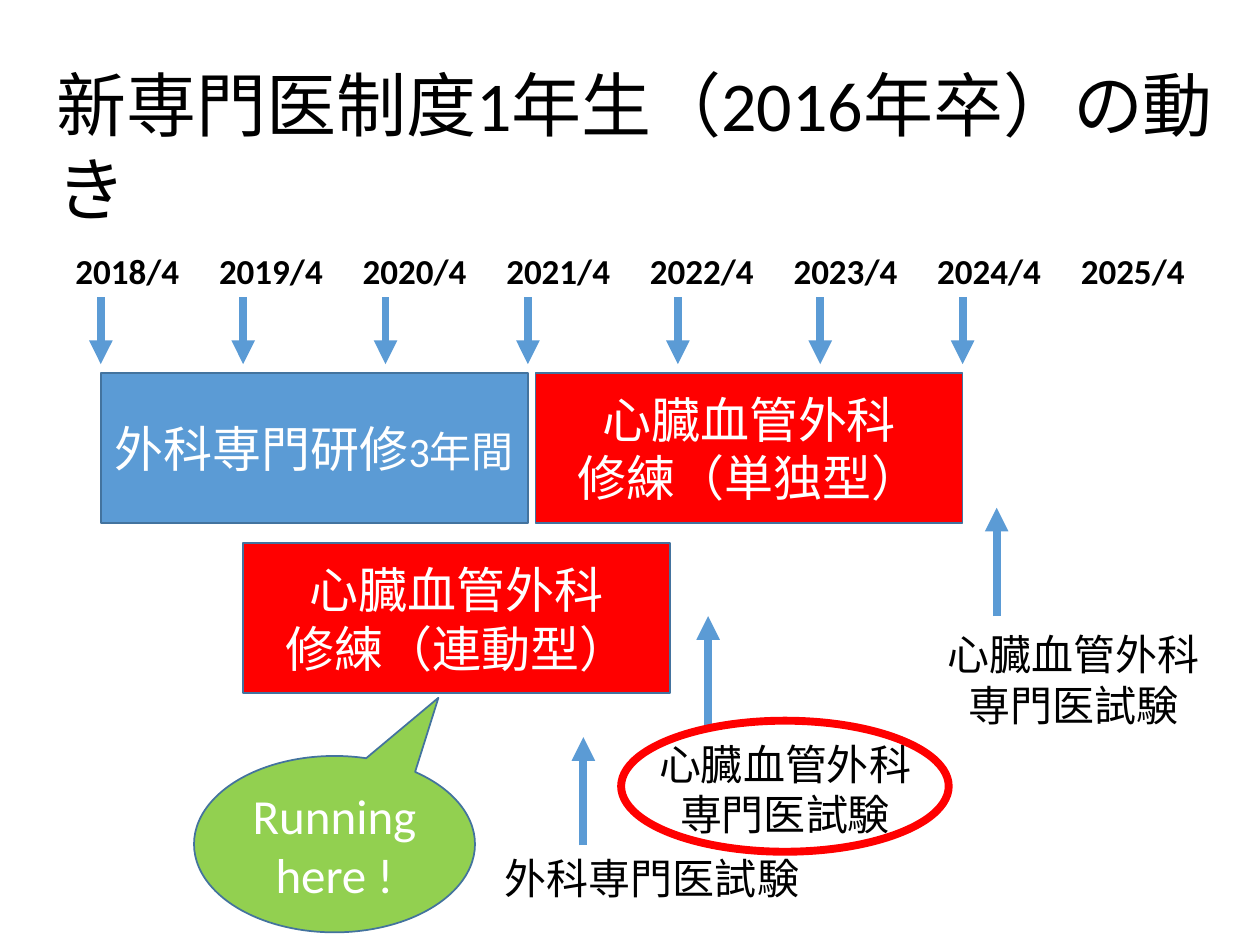
import pptx
import pptx.util
import pptx.dml.color
import pptx.enum.shapes
import pptx.enum.text
import pptx.oxml.ns
from lxml import etree

Inches, Pt = pptx.util.Inches, pptx.util.Pt
SHAPE = pptx.enum.shapes.MSO_SHAPE
ALIGN = pptx.enum.text.PP_ALIGN
ANCHOR = pptx.enum.text.MSO_ANCHOR
AUTO_SIZE = pptx.enum.text.MSO_AUTO_SIZE

# Content
HEADING = "新専門医制度1年生（2016年卒）の動き"
DATES = [f"{year}/4" for year in range(2018, 2026)]
# start year, whole gap passed, row, fill, paragraphs of (text, size) runs
TRAININGS = [
    (0, False, 0, "blue", [[("外科専門研修", 28), ("3年間", 24)]]),
    (3, True, 0, "red", [[("心臓血管外科", 28)], [("修練（単独型）", 28)]]),
    (1, False, 1, "red", [[("心臓血管外科", 28)], [("修練（連動型）", 28)]]),
]
HEART_EXAM = ["心臓血管外科", "専門医試験"]
# label lines, label box, arrow x, arrow bottom
EXAMS = [
    (["外科専門医試験"], (3.91, 6.72, 2.56, 0.5), 4.63, 6.71),
    (HEART_EXAM, (5.12, 5.81, 2.22, 0.91), 5.62, 5.75),
    (HEART_EXAM, (7.41, 4.94, 2.22, 0.91), 7.91, 4.89),
]
CALLOUT = "Running here !"

COLORS = {"blue": "5B9BD5", "edge": "43739E", "red": "FF0000",
          "green": "92D050", "black": "000000", "white": "FFFFFF"}

# Timeline grid
START, YEAR, GAP = 0.8, 1.13, 0.06
DATE_PITCH = 1.14
BAR_TOP, BAR_HEIGHT, ROW_PITCH = 2.96, 1.19, 1.35
DATE_ARROW = (2.36, 2.89)
EXAM_ARROW_LENGTH = 0.86


def year_x(year, after_gap):
    return START + YEAR * year + (GAP if after_gap else 0)


def color(name):
    return pptx.dml.color.RGBColor.from_string(COLORS[name])


def box(left, top, width, height):
    return [Inches(value) for value in (left, top, width, height)]


def place(part, bounds):
    part.left, part.top, part.width, part.height = box(*bounds)


def write(frame, paragraphs, ink, align, bold=False):
    for index, runs in enumerate(paragraphs):
        paragraph = frame.paragraphs[0] if index == 0 else frame.add_paragraph()
        paragraph.alignment = align
        for text, size in runs:
            run = paragraph.add_run()
            run.text = text
            run.font.name, run.font.size, run.font.bold = "Calibri", Pt(size), bold
            run.font.color.rgb = color(ink)


def add_shape(slide, kind, bounds, fill, edge, width):
    shape = slide.shapes.add_shape(kind, *box(*bounds))
    shape.shadow.inherit = False
    if fill:
        shape.fill.solid()
        shape.fill.fore_color.rgb = color(fill)
    else:
        shape.fill.background()
    shape.line.color.rgb = color(edge)
    shape.line.width = Pt(width)
    shape.text_frame.vertical_anchor = ANCHOR.MIDDLE
    return shape


def add_arrow(slide, x, start, end):
    arrow = slide.shapes.add_connector(
        pptx.enum.shapes.MSO_CONNECTOR.STRAIGHT,
        Inches(x), Inches(start), Inches(x), Inches(end))
    arrow.line.color.rgb = color("blue")
    arrow.line.width = Pt(4.5)
    qn = pptx.oxml.ns.qn
    etree.SubElement(arrow.line._get_or_add_ln(), qn("a:tailEnd"), type="triangle")
    etree.SubElement(arrow._element.spPr, qn("a:effectLst"))


def add_label(slide, bounds, paragraphs, size, align, bold=False):
    label = slide.shapes.add_textbox(*box(*bounds))
    frame = label.text_frame
    frame.word_wrap = False
    write(frame, [[(text, size)] for text in paragraphs], "black", align, bold)
    return label


def main():
    deck = pptx.Presentation()
    deck.slide_width, deck.slide_height = Inches(10), Inches(7.5)
    slide = deck.slides.add_slide(deck.slide_layouts[5])

    # Heading
    heading = slide.shapes.title
    place(heading, (0.35, 0.44, 9.39, 0.77))
    heading.text_frame.vertical_anchor = ANCHOR.TOP
    heading.text_frame.auto_size = AUTO_SIZE.SHAPE_TO_FIT_TEXT
    write(heading.text_frame, [[(HEADING, 40)]], "black", ALIGN.LEFT)

    # Dates on evenly spaced tab stops
    dates = add_label(slide, (0.5, 1.44, 9.24, 1.45), ["\t".join(DATES)],
                      20, ALIGN.LEFT, bold=True)
    dates.text_frame.word_wrap = True
    dates.text_frame.vertical_anchor = ANCHOR.MIDDLE
    date_line = dates.text_frame.paragraphs[0]
    date_line.line_spacing = 0.9
    qn = pptx.oxml.ns.qn
    tabs = etree.SubElement(date_line._p.get_or_add_pPr(), qn("a:tabLst"))
    for index in range(1, len(DATES)):
        etree.SubElement(tabs, qn("a:tab"), algn="l",
                         pos=str(Inches(DATE_PITCH * index)))

    # Date arrows
    for year in range(len(DATES) - 1):
        add_arrow(slide, year_x(year, year > 3), *DATE_ARROW)

    # Three-year trainings
    for year, after_gap, row, fill, paragraphs in TRAININGS:
        bounds = (year_x(year, after_gap), BAR_TOP + ROW_PITCH * row,
                  3 * YEAR, BAR_HEIGHT)
        bar = add_shape(slide, SHAPE.RECTANGLE, bounds, fill, "edge", 1)
        write(bar.text_frame, paragraphs, "white", ALIGN.CENTER)

    # Exams with their arrows
    for lines, bounds, x, bottom in EXAMS:
        align = ALIGN.CENTER if len(lines) > 1 else ALIGN.LEFT
        label = add_label(slide, bounds, lines, 24, align)
        label.text_frame.auto_size = AUTO_SIZE.SHAPE_TO_FIT_TEXT
        add_arrow(slide, x, bottom, bottom - EXAM_ARROW_LENGTH)

    # Callout and ring around the coming exam
    callout = add_shape(slide, SHAPE.OVAL_CALLOUT, (1.54, 6, 2.23, 1.4),
                        "green", "edge", 1)
    callout.adjustments[0], callout.adjustments[1] = 0.37, -0.83
    write(callout.text_frame, [[(CALLOUT, 28)]], "white", ALIGN.CENTER)
    add_shape(slide, SHAPE.OVAL, (4.93, 5.72, 2.6, 1.04), None, "red", 4.5)

    deck.save("out.pptx")


if __name__ == "__main__":
    main()
